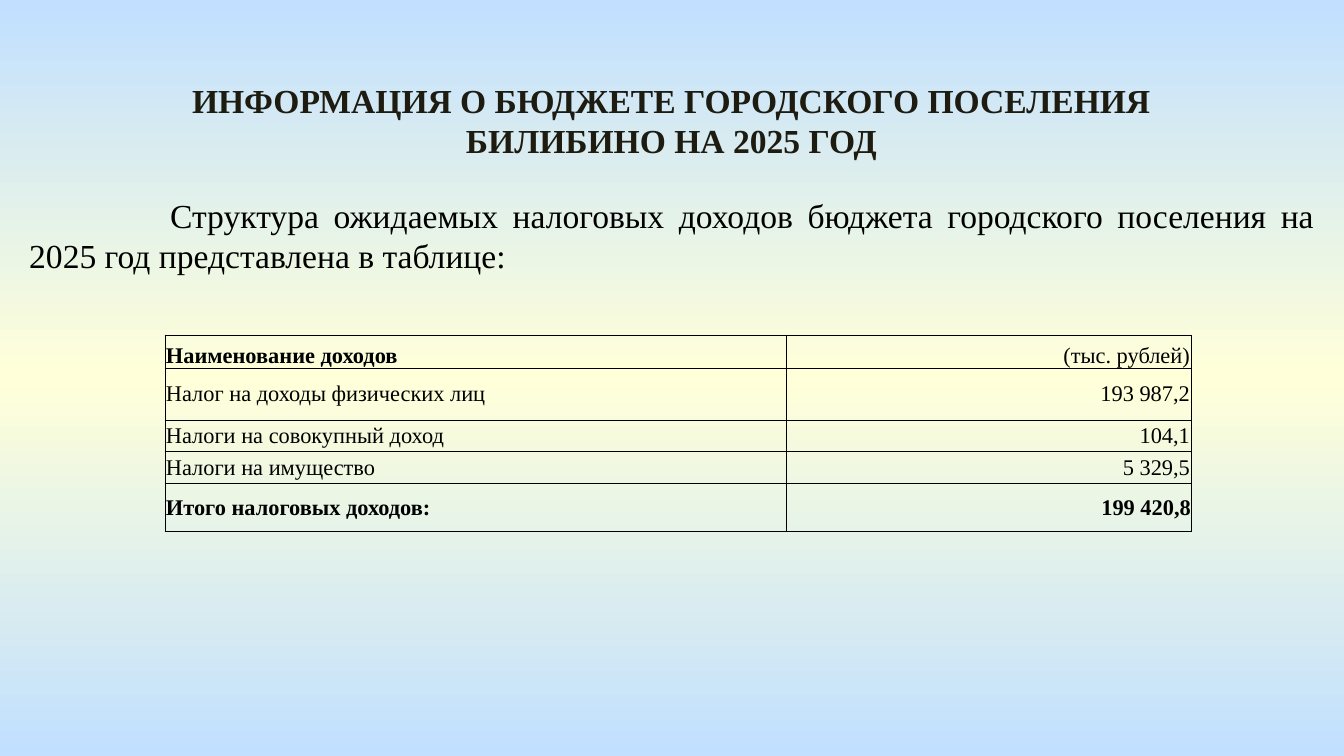
import copy
import lxml.etree
import pptx
import pptx.util
import pptx.dml.color
import pptx.enum.text
import pptx.oxml.ns

PX = 6804
ALIGN = pptx.enum.text.PP_ALIGN
ANCHOR = pptx.enum.text.MSO_ANCHOR
qn = pptx.oxml.ns.qn


def paint(color, code):
    color.rgb = pptx.dml.color.RGBColor.from_string(code)


def write(frame, text, size=18, bold=False, code="000000", align=ALIGN.JUSTIFY, anchor=ANCHOR.TOP):
    frame.word_wrap = True
    frame.vertical_anchor = anchor
    para = frame.paragraphs[0]
    para.alignment = align
    run = para.add_run()
    run.text = text
    run.font.name = "Times New Roman"
    run.font.size = pptx.util.Pt(size)
    run.font.bold = bold
    paint(run.font.color, code)


deck = pptx.Presentation()
deck.slide_width, deck.slide_height = 1344 * PX, 756 * PX
slide = deck.slides.add_slide(deck.slide_layouts[5])

fill = slide.background.fill
fill.gradient()
fill.gradient_angle = 270
stops = slide.element.find(".//" + qn("a:gsLst"))
stops.append(copy.deepcopy(stops[0]))
for stop, (pos, code) in zip(fill.gradient_stops, [(0, "C1E0FF"), (0.5, "FFFFD9"), (1, "C1E0FF")]):
    stop.position = pos
    paint(stop.color, code)

title = slide.shapes.title
title.left, title.top, title.width, title.height = [n * PX for n in (152, 73, 1039, 95)]
title.text_frame.auto_size = pptx.enum.text.MSO_AUTO_SIZE.NONE
write(title.text_frame, "ИНФОРМАЦИЯ О БЮДЖЕТЕ ГОРОДСКОГО ПОСЕЛЕНИЯ БИЛИБИНО НА 2025 ГОД",
      bold=True, code="1E1C11", align=ALIGN.CENTER)

intro = slide.shapes.add_textbox(*[n * PX for n in (16, 188, 1312, 95)])
write(intro.text_frame, "Структура ожидаемых налоговых доходов бюджета городского поселения на 2025 год представлена в таблице:")
intro.text_frame.paragraphs[0]._p.get_or_add_pPr().set("indent", str(141 * PX))

rows = [
    ("Наименование доходов", "(тыс. рублей)", 33),
    ("Налог на доходы физических лиц", "193 987,2", 52),
    ("Налоги на совокупный доход", "104,1", 32),
    ("Налоги на имущество", "5 329,5", 32),
    ("Итого налоговых доходов:", "199 420,8", 48),
]
wide = [621, 405]
high = [row[2] for row in rows]
last = len(rows) - 1
table = slide.shapes.add_table(
    len(rows), 2, 165 * PX, 335 * PX, sum(wide) * PX, sum(high) * PX).table
table.first_row = False
table.horz_banding = False
for col, width in zip(table.columns, wide):
    col.width = width * PX

for r, row in enumerate(rows):
    table.rows[r].height = high[r] * PX
    for c, text in enumerate(row[:2]):
        cell = table.cell(r, c)
        inset = 0 if (r, c) == (last, 1) else PX
        cell.margin_left = cell.margin_right = cell.margin_top = inset
        cell.margin_bottom = 0
        cell.vertical_anchor = ANCHOR.MIDDLE if r else ANCHOR.BOTTOM
        write(cell.text_frame, text, size=12,
              bold=r == last or (r, c) == (0, 0),
              align=ALIGN.RIGHT if c else ALIGN.JUSTIFY, anchor=None)
        props = cell._tc.get_or_add_tcPr()
        for side in ("a:lnL", "a:lnR", "a:lnT", "a:lnB"):
            line = lxml.etree.SubElement(props, qn(side), w=str(pptx.util.Pt(0.5)))
            solid = lxml.etree.SubElement(line, qn("a:solidFill"))
            lxml.etree.SubElement(solid, qn("a:srgbClr"), val="000000")
        cell.fill.background()

deck.save("out.pptx")
